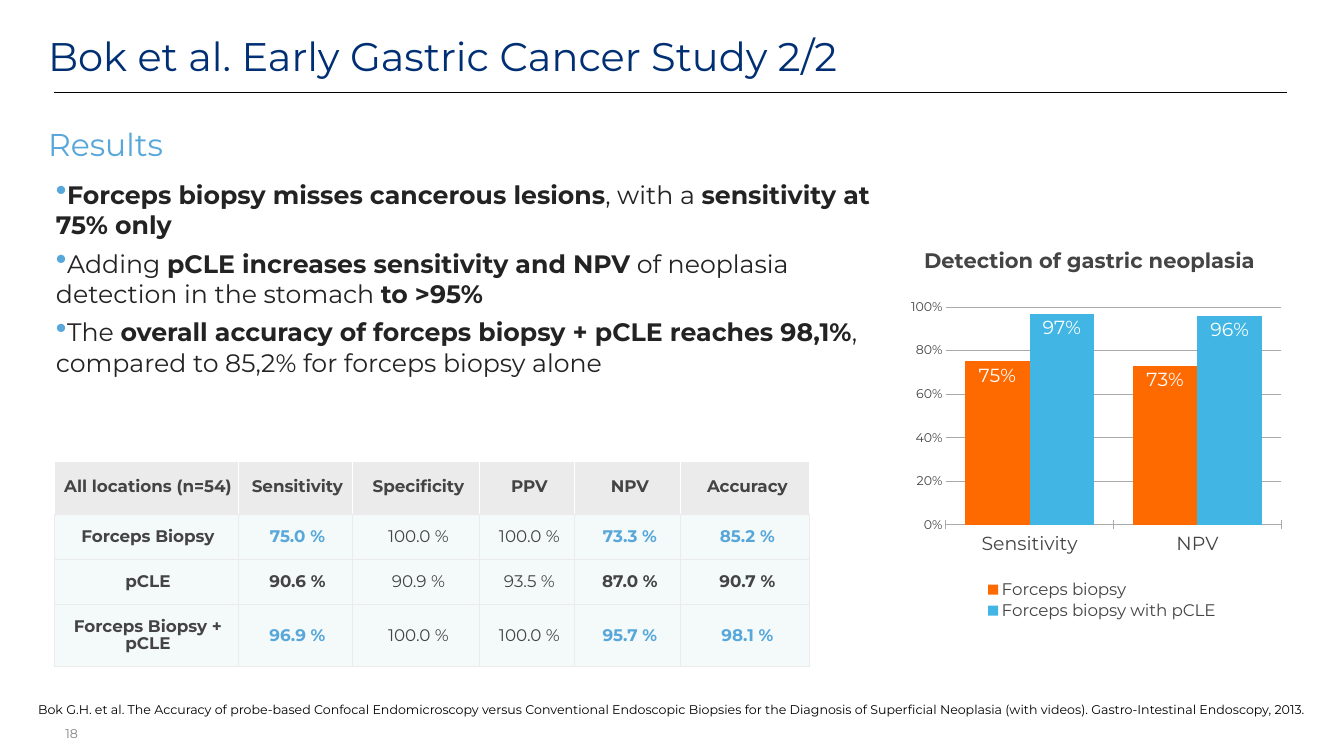
from lxml.etree import SubElement
from pptx import Presentation
from pptx.chart.data import CategoryChartData
from pptx.dml.color import RGBColor
from pptx.enum.chart import XL_CHART_TYPE, XL_LABEL_POSITION, XL_LEGEND_POSITION, XL_TICK_MARK
from pptx.enum.shapes import MSO_CONNECTOR
from pptx.enum.text import MSO_ANCHOR, PP_ALIGN
from pptx.oxml.ns import qn
from pptx.util import Pt

PX = 12095
FONT = "Montserrat"
NAVY = RGBColor(0x00, 0x2F, 0x73)
SKY = RGBColor(0x58, 0xA7, 0xDA)
INK = RGBColor(0x23, 0x23, 0x23)
SLATE = RGBColor(0x44, 0x44, 0x44)
GRAY = RGBColor(0x81, 0x81, 0x81)
GRID = RGBColor(0xAA, 0xAA, 0xAA)
HEADER = RGBColor(0xEB, 0xEB, 0xEB)
BODY = RGBColor(0xF4, 0xFA, 0xFA)
ORANGE = RGBColor(0xFF, 0x6A, 0x00)
BLUE = RGBColor(0x41, 0xB6, 0xE4)
WHITE = RGBColor(0xFF, 0xFF, 0xFF)
BLACK = RGBColor(0x00, 0x00, 0x00)


def style(font, size, color, bold=False):
    font.name = FONT
    font.size = Pt(size)
    font.color.rgb = color
    font.bold = bold


def set_layout(parent, index, **fractions):
    for old in parent.findall(qn("c:layout")):
        parent.remove(old)
    layout = SubElement(parent, qn("c:layout"))
    manual = SubElement(layout, qn("c:manualLayout"))
    if index == 0:
        SubElement(manual, qn("c:layoutTarget"), val="inner")
    for mode in ("xMode", "yMode"):
        SubElement(manual, qn(f"c:{mode}"), val="edge")
    for name, value in fractions.items():
        SubElement(manual, qn(f"c:{name}"), val=str(value))
    parent.insert(index, layout)


deck = Presentation()
deck.slide_width = 1344 * PX
deck.slide_height = 756 * PX
page = deck.slides.add_slide(deck.slide_layouts[5])

title = page.shapes.title
title.left, title.top, title.width, title.height = 48 * PX, 18 * PX, 1231 * PX, 75 * PX
frame = title.text_frame
frame.margin_left = frame.margin_right = frame.margin_top = frame.margin_bottom = 0
frame.vertical_anchor = MSO_ANCHOR.MIDDLE
frame.text = "Bok et al. Early Gastric Cancer Study 2/2"
frame.paragraphs[0].alignment = PP_ALIGN.LEFT
style(frame.paragraphs[0].font, 38, NAVY)

rule = page.shapes.add_connector(MSO_CONNECTOR.STRAIGHT, 54 * PX, 92 * PX, 1287 * PX, 92 * PX)
rule.line.color.rgb = BLACK
rule.line.width = Pt(0.25)
SubElement(rule._element.spPr, qn("a:effectLst"))

findings = [
    [("Forceps biopsy misses cancerous lesions", True), (", with a ", False),
     ("sensitivity at 75% only", True)],
    [("Adding ", False), ("pCLE increases sensitivity and NPV", True),
     (" of neoplasia detection in the stomach ", False), ("to >95%", True)],
    [("The ", False), ("overall accuracy of forceps biopsy + pCLE reaches 98,1%", True),
     (", compared to 85,2% for forceps biopsy alone", False)],
]
citation = (
    "Bok G.H. et al. The Accuracy of probe-based Confocal Endomicroscopy versus Conventional "
    "Endoscopic Biopsies for the Diagnosis of Superficial Neoplasia (with videos). "
    "Gastro-Intestinal Endoscopy, 2013."
)
texts = [
    (45, 122, 122, 38, [[("Results", False)]], 30, SKY, PP_ALIGN.LEFT, False),
    (884, 244, 411, 38, [[("Detection of gastric neoplasia", True)]], 20, SLATE, PP_ALIGN.CENTER, True),
    (51, 176, 846, 203, findings, 24, INK, PP_ALIGN.LEFT, True),
    (0, 699, 1344, 19, [[(citation, False)]], 12, BLACK, PP_ALIGN.CENTER, True),
    (60, 723, 21, 19, [[("18", False)]], 12, GRAY, PP_ALIGN.RIGHT, False),
]
for left, top, width, height, paragraphs, size, color, alignment, wrap in texts:
    box = page.shapes.add_textbox(left * PX, top * PX, width * PX, height * PX)
    frame = box.text_frame
    frame.word_wrap = wrap
    frame.margin_left = frame.margin_right = frame.margin_top = frame.margin_bottom = 3 * PX
    for number, spans in enumerate(paragraphs):
        para = frame.add_paragraph() if number else frame.paragraphs[0]
        para.alignment = alignment
        if number:
            para.space_before = Pt(8)
        if paragraphs is findings:
            properties = para._p.get_or_add_pPr()
            properties.set("marL", str(2 * PX))
            properties.set("indent", "0")
            bullet_color = SubElement(properties, qn("a:buClr"))
            SubElement(bullet_color, qn("a:srgbClr"), val=str(SKY))
            SubElement(properties, qn("a:buSzPct"), val="125000")
            SubElement(properties, qn("a:buChar"), char="•")
        style(para.font, size, color, spans[0][1] if len(spans) == 1 else None)
        for words, bold in spans:
            span = para.add_run()
            span.text = words
            if len(spans) > 1:
                span.font.bold = bold

results = [
    ["All locations (n=54)", "Sensitivity", "Specificity", "PPV", "NPV", "Accuracy"],
    ["Forceps Biopsy", "75.0 %", "100.0 %", "100.0 %", "73.3 %", "85.2 %"],
    ["pCLE", "90.6 %", "90.9 %", "93.5 %", "87.0 %", "90.7 %"],
    ["Forceps Biopsy + pCLE", "96.9 %", "100.0 %", "100.0 %", "95.7 %", "98.1 %"],
]
column_widths = [184, 115, 127, 95, 106, 129]
row_heights = [53, 46, 45, 62]
body_margins = [3, 11, 11, 3, 11, 14]
table = page.shapes.add_table(
    4, 6, 54 * PX, 461 * PX, sum(column_widths) * PX, sum(row_heights) * PX
).table
for column, width in zip(table.columns, column_widths):
    column.width = width * PX
for row, height in zip(table.rows, row_heights):
    row.height = height * PX
for row, values in enumerate(results):
    for column, value in enumerate(values):
        cell = table.cell(row, column)
        margin = body_margins[column] if row else 3
        cell.margin_left = cell.margin_right = cell.margin_top = cell.margin_bottom = margin * PX
        cell.vertical_anchor = MSO_ANCHOR.MIDDLE
        cell.fill.solid()
        cell.fill.fore_color.rgb = BODY if row else HEADER
        cell.text = value
        para = cell.text_frame.paragraphs[0]
        para.alignment = PP_ALIGN.CENTER
        para.line_spacing = 0.83
        para._p.get_or_add_pPr().set("marL", str(4 * PX))
        highlighted = row in (1, 3) and column in (1, 4, 5)
        style(para.font, 16, SKY if highlighted else SLATE, row == 0 or column not in (2, 3))
        properties = cell._tc.get_or_add_tcPr()
        for index, side in enumerate("LRTB"):
            border = SubElement(properties, qn(f"a:ln{side}"), w=str(Pt(1)))
            fill = SubElement(border, qn("a:solidFill"))
            border_color = HEADER if row or side == "B" else WHITE
            SubElement(fill, qn("a:srgbClr"), val=str(border_color))
            properties.insert(index, border)

chart_data = CategoryChartData(number_format="0%")
chart_data.categories = ["Sensitivity", "NPV"]
chart_data.add_series("Forceps biopsy", [0.75, 0.73])
chart_data.add_series("Forceps biopsy with pCLE", [0.97, 0.96])
chart = page.shapes.add_chart(
    XL_CHART_TYPE.COLUMN_CLUSTERED, 891 * PX, 287 * PX, 391 * PX, 335 * PX, chart_data
).chart
chart.has_title = False
style(chart.font, 10, BLACK)

plot = chart.plots[0]
plot.gap_width = 60
plot.overlap = 0
plot.vary_by_categories = False
for series, color in zip(plot.series, (ORANGE, BLUE)):
    series.format.fill.solid()
    series.format.fill.fore_color.rgb = color
    labels = series.data_labels
    labels.show_value = True
    labels.position = XL_LABEL_POSITION.INSIDE_END
    labels.number_format = "0%"
    labels.number_format_is_linked = False
    style(labels.font, 18, WHITE)

category_axis = chart.category_axis
category_axis.major_tick_mark = XL_TICK_MARK.CROSS
category_axis.format.line.color.rgb = GRID
category_axis.format.line.width = Pt(1)
style(category_axis.tick_labels.font, 18, SLATE)

value_axis = chart.value_axis
value_axis.minimum_scale = 0
value_axis.maximum_scale = 1
value_axis.major_unit = 0.2
value_axis.major_tick_mark = XL_TICK_MARK.INSIDE
value_axis.format.line.fill.background()
value_axis.major_gridlines.format.line.color.rgb = GRID
value_axis.major_gridlines.format.line.width = Pt(1)
value_axis.tick_labels.number_format = "0%"
value_axis.tick_labels.number_format_is_linked = False
style(value_axis.tick_labels.font, 12, SLATE)

chart.has_legend = True
legend = chart.legend
legend.position = XL_LEGEND_POSITION.BOTTOM
legend.include_in_layout = True
style(legend.font, 16, SLATE)
set_layout(chart._chartSpace.chart.plotArea, 0, x=0.14, y=0.06, w=0.86, h=0.65)
set_layout(legend._element, 1, x=0.23, y=0.87, w=0.62, h=0.13)

deck.save("out.pptx")
